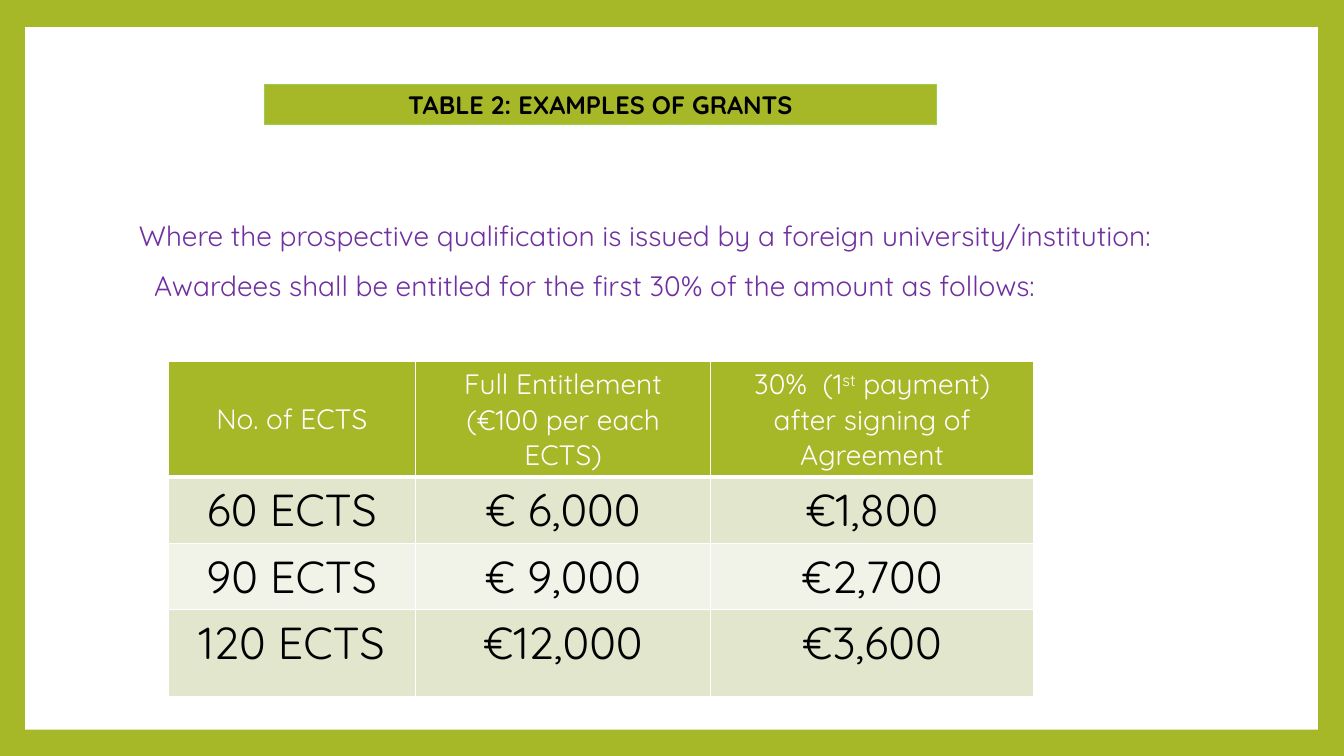
from dataclasses import dataclass

from lxml.etree import SubElement
from pptx import Presentation
from pptx.dml.color import RGBColor as Color
from pptx.enum.shapes import MSO_SHAPE as Preset
from pptx.enum.text import MSO_ANCHOR as Anchor, MSO_AUTO_SIZE as AutoSize, PP_ALIGN as Align
from pptx.oxml.ns import qn
from pptx.util import Inches, Pt


@dataclass(frozen=True)
class Theme:
    font: str = "Quicksand"
    green: str = "A6B727"
    edge: str = "92D050"
    white: str = "FFFFFF"
    black: str = "000000"
    purple: str = "7030A0"
    bands: tuple = ("E1E6CD", "F1F3E8")
    title: int = 18
    body: int = 20
    amount: int = 32


theme = Theme()


def add_span(para, text, size, color, bold=False):
    span = para.add_run()
    span.text = text
    span.font.name = theme.font
    span.font.size = Pt(size)
    span.font.bold = bold
    span.font.color.rgb = Color.from_string(color)
    return span


def add_border(cell, side, width):
    line = SubElement(cell._tc.get_or_add_tcPr(), qn(f"a:ln{side}"), w=str(Pt(width)))
    fill = SubElement(line, qn("a:solidFill"))
    SubElement(fill, qn("a:srgbClr"), val=theme.white)


deck = Presentation()
deck.slide_width = Inches(13.33)
deck.slide_height = Inches(7.5)
page = deck.slides.add_slide(deck.slide_layouts[5])
page.background.fill.solid()
page.background.fill.fore_color.rgb = Color.from_string(theme.green)

panel = page.shapes.add_shape(
    Preset.RECTANGLE, Inches(0.25), Inches(0.27), Inches(12.82), Inches(6.97))
panel.shadow.inherit = False
panel.fill.solid()
panel.fill.fore_color.rgb = Color.from_string(theme.white)
panel.line.fill.background()
page.shapes.title._element.addprevious(panel._element)

intro = page.shapes.add_textbox(Inches(1.28), Inches(2.16), Inches(10.96), Inches(1))
intro.text_frame.word_wrap = True
sentences = [
    ("Where the prospective qualification is issued by a foreign university/institution:", 0),
    ("Awardees shall be entitled for the first 30% of the amount as follows:", 0.15),
]
for index, (sentence, indent) in enumerate(sentences):
    para = intro.text_frame.add_paragraph() if index else intro.text_frame.paragraphs[0]
    para.line_spacing = 0.9
    para.space_before = Pt(14)
    para._p.get_or_add_pPr().set("marL", str(Inches(indent)))
    add_span(para, sentence, theme.body, theme.purple)

headings = [
    [["No. of ECTS"]],
    [["Full Entitlement"], ["(€100 per each ECTS)"]],
    [["30%  (1", "st", " payment) after signing of Agreement"]],
]
grants = [
    ["60 ECTS", "€ 6,000", "€1,800"],
    ["90 ECTS", "€ 9,000", "€2,700"],
    ["120 ECTS", "€12,000", "€3,600"],
]
rows = [headings] + [[[[value]] for value in grant] for grant in grants]
column_widths = [2.45, 2.93, 3.2]
row_heights = [1.14, 0.66, 0.66, 0.86]
table = page.shapes.add_table(
    len(rows), len(column_widths), Inches(1.67), Inches(3.59),
    Inches(sum(column_widths)), Inches(sum(row_heights))).table
for column, width in zip(table.columns, column_widths):
    column.width = Inches(width)
for row, height in zip(table.rows, row_heights):
    row.height = Inches(height)

for row_index, row in enumerate(rows):
    is_header = row_index == 0
    size = theme.body if is_header else theme.amount
    color = theme.white if is_header else theme.black
    shade = theme.green if is_header else theme.bands[(row_index - 1) % 2]
    borders = {"L": 1, "R": 1, "T": 3 if row_index == 1 else 1, "B": 3 if is_header else 1}
    for column_index, lines in enumerate(row):
        cell = table.cell(row_index, column_index)
        for side, width in borders.items():
            add_border(cell, side, width)
        cell.fill.solid()
        cell.fill.fore_color.rgb = Color.from_string(shade)
        cell.vertical_anchor = Anchor.MIDDLE if is_header else Anchor.TOP
        for line_index, parts in enumerate(lines):
            frame = cell.text_frame
            para = frame.add_paragraph() if line_index else frame.paragraphs[0]
            para.alignment = Align.CENTER
            for part in parts:
                span = add_span(para, part, size, color)
                if part == "st":
                    span._r.get_or_add_rPr().set("baseline", "30000")

title = page.shapes.title
title.left, title.top = Inches(2.62), Inches(0.84)
title.width, title.height = Inches(6.67), Inches(0.4)
title.fill.solid()
title.fill.fore_color.rgb = Color.from_string(theme.green)
title.line.color.rgb = Color.from_string(theme.edge)
title.line.width = Pt(0.75)
title.text_frame.auto_size = AutoSize.NONE
title.text_frame.vertical_anchor = Anchor.MIDDLE
para = title.text_frame.paragraphs[0]
para.alignment = Align.CENTER
add_span(para, "TABLE 2: EXAMPLES OF GRANTS", theme.title, theme.black, bold=True)

deck.save("out.pptx")
